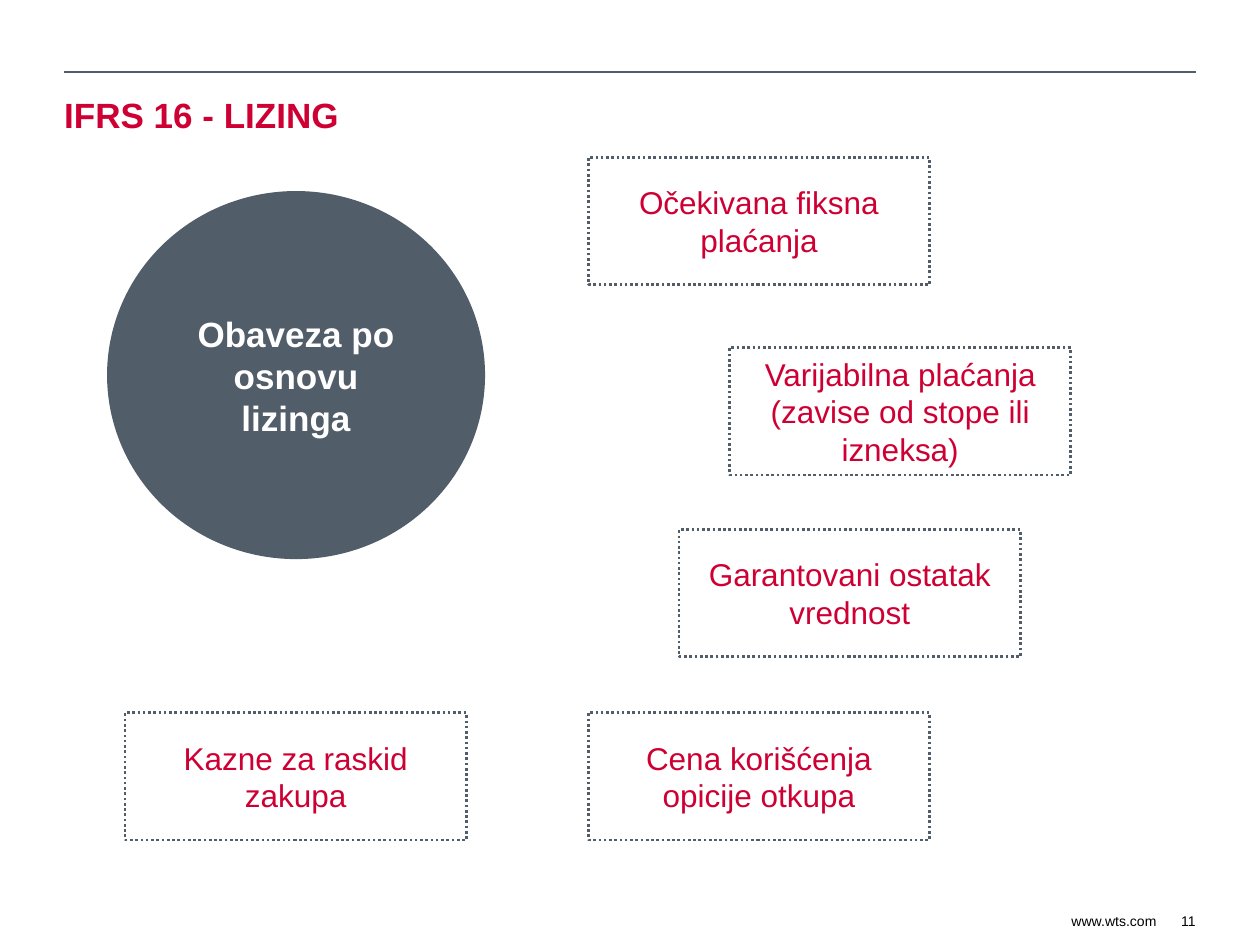
import lxml.etree
import pptx
import pptx.dml.color
import pptx.enum.dml
import pptx.enum.shapes
import pptx.enum.text
import pptx.oxml.ns
import pptx.util

COLORS = {"red": "CE0033", "slate": "515D69", "white": "FFFFFF", "black": "000000"}
ALIGN = pptx.enum.text.PP_ALIGN
SHAPES = pptx.enum.shapes.MSO_SHAPE
MARGIN, CONTENT_WIDTH = 36.7, 646.6
BOX_WIDTH, BOX_HEIGHT = 195, 72.7
PAYMENTS = [
    ("Očekivana fiksna plaćanja", 336.2, 90),
    ("Varijabilna plaćanja (zavise od stope ili izneksa)", 416.9, 198.7),
    ("Garantovani ostatak vrednost", 388.1, 302.6),
    ("Cena korišćenja opicije otkupa", 336.2, 407.3),
    ("Kazne za raskid zakupa", 71.5, 407.3),
]


def rgb(name):
    """Return the palette colour with this name."""
    return pptx.dml.color.RGBColor.from_string(COLORS[name])


def points(*values):
    """Convert numbers to lengths in points."""
    return [pptx.util.Pt(value) for value in values]


def write_text(shape, text, size=18, color="red", bold=False, align=ALIGN.CENTER, inset=None, wrap=True):
    """Fill a shape with one formatted, vertically centred paragraph."""
    frame = shape.text_frame
    frame.text = text
    frame.word_wrap = wrap
    frame.auto_size = pptx.enum.text.MSO_AUTO_SIZE.NONE
    frame.vertical_anchor = pptx.enum.text.MSO_ANCHOR.MIDDLE
    if inset is not None:
        frame.margin_left = frame.margin_right = pptx.util.Pt(inset)
        frame.margin_top = frame.margin_bottom = pptx.util.Pt(inset)
    paragraph = frame.paragraphs[0]
    paragraph.alignment = align
    font = paragraph.font
    font.name, font.size, font.bold = "Arial", pptx.util.Pt(size), bold
    font.color.rgb = rgb(color)


def add_title(slide, text):
    """Place the slide title in its placeholder."""
    title = slide.shapes.title
    title.left, title.top, title.width, title.height = points(MARGIN, 52, CONTENT_WIDTH, 27)
    write_text(title, text, size=20, bold=True, align=ALIGN.LEFT, inset=0)


def add_rule(slide, top):
    """Draw the thin line across the content width."""
    rule = slide.shapes.add_connector(
        pptx.enum.shapes.MSO_CONNECTOR.STRAIGHT,
        *points(MARGIN, top, MARGIN + CONTENT_WIDTH, top))
    rule.line.color.rgb = rgb("slate")
    rule.line.width = pptx.util.Pt(0.75)
    lxml.etree.SubElement(rule._element.spPr, pptx.oxml.ns.qn("a:effectLst"))


def add_circle(slide, text):
    """Add the filled ellipse for the central concept."""
    circle = slide.shapes.add_shape(SHAPES.OVAL, *points(61.2, 109.2, 216, 210.3))
    circle.shadow.inherit = False
    circle.fill.solid()
    circle.fill.fore_color.rgb = rgb("slate")
    circle.line.fill.background()
    write_text(circle, text, size=20, color="white", bold=True)


def add_payment_box(slide, text, left, top):
    """Add one dotted box naming a part of the liability."""
    box = slide.shapes.add_shape(SHAPES.RECTANGLE, *points(left, top, BOX_WIDTH, BOX_HEIGHT))
    box.shadow.inherit = False
    box.fill.background()
    box.line.color.rgb = rgb("slate")
    box.line.width = pptx.util.Pt(1.5)
    box.line.dash_style = pptx.enum.dml.MSO_LINE.ROUND_DOT
    write_text(box, text)


def add_footer(slide, text, left, width):
    """Add a small right-aligned footer text."""
    footer = slide.shapes.add_textbox(*points(left, 521.3, width, 10))
    write_text(footer, text, size=8, color="black", align=ALIGN.RIGHT, inset=0, wrap=False)


def main():
    """Build and save the slide."""
    presentation = pptx.Presentation()
    presentation.slide_width, presentation.slide_height = points(720, 540)
    slide = presentation.slides.add_slide(presentation.slide_layouts[5])
    add_rule(slide, 41.2)
    add_title(slide, "IFRS 16 - LIZING")
    add_circle(slide, "Obaveza po osnovu lizinga")
    for text, left, top in PAYMENTS:
        add_payment_box(slide, text, left, top)
    add_footer(slide, "www.wts.com", 611, 50)
    add_footer(slide, "11", 667.3, 16)
    presentation.save("out.pptx")


if __name__ == "__main__":
    main()
